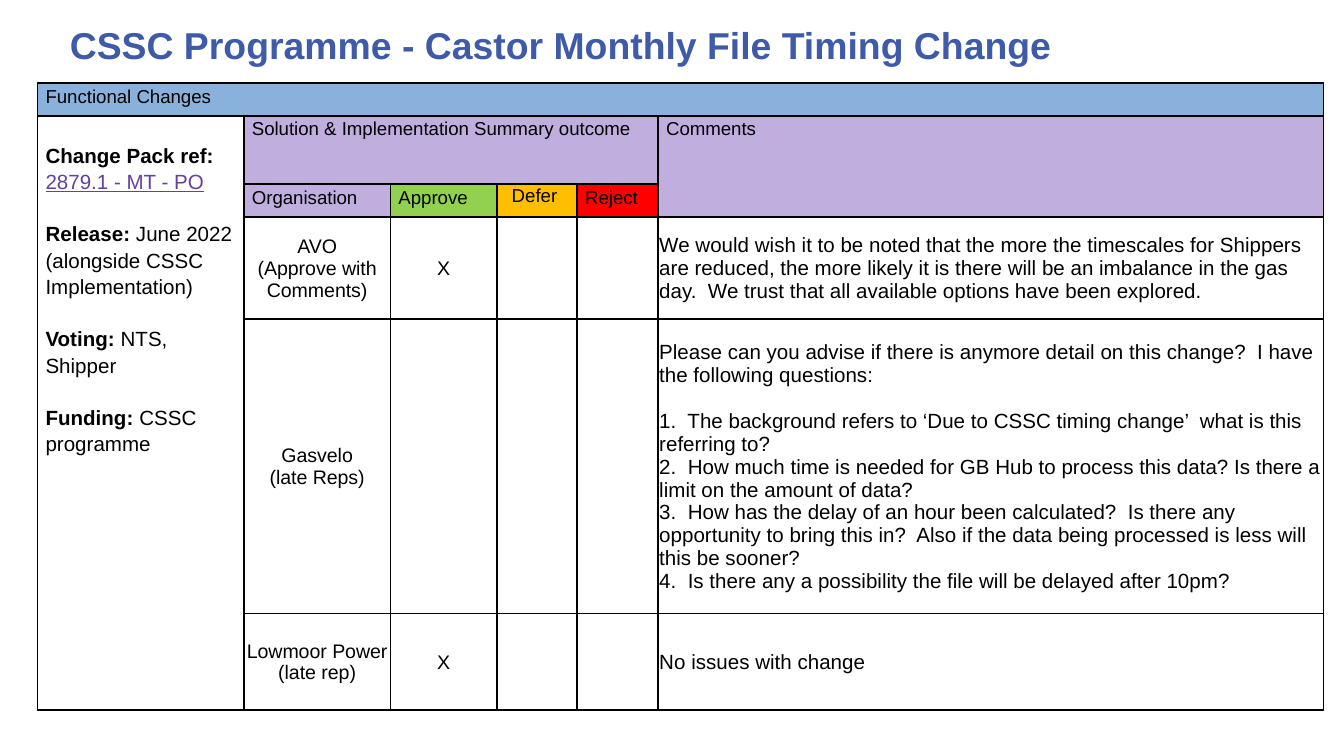
import pptx
import pptx.dml.color
import pptx.enum.text
import pptx.oxml
import pptx.util
from lxml import etree
from pptx.util import Cm, Pt

ALIGN = pptx.enum.text.PP_ALIGN
ANCHOR = pptx.enum.text.MSO_ANCHOR
DRAWING = "http://schemas.openxmlformats.org/drawingml/2006/main"

BLACK, TITLE_BLUE, LINK_PURPLE = "000000", "3E5AA8", "6440A3"
BLUE, LILAC, GREEN, AMBER, RED = "89B1DC", "C0AEDF", "92D050", "FFBF00", "FF0000"

COLUMNS = [3.9, 2.77, 2.01, 1.52, 1.53, 12.57]
ROWS = [0.62, 1.29, 0.62, 1.93, 5.56, 1.82]
WIDE, NARROW = 0.15, 0.02

# Each entry: organisation lines, approval mark, comment paragraphs
RESPONSES = [
    (["AVO", "(Approve with Comments)"], "X", [
        "We would wish it to be noted that the more the timescales for Shippers are "
        "reduced, the more likely it is there will be an imbalance in the gas day.  "
        "We trust that all available options have been explored."]),
    (["Gasvelo", "(late Reps)"], "", [
        "Please can you advise if there is anymore detail on this change?  "
        "I have the following questions:",
        "1.  The background refers to ‘Due to CSSC timing change’  what is this referring to?",
        "2.  How much time is needed for GB Hub to process this data? "
        "Is there a limit on the amount of data?",
        "3.  How has the delay of an hour been calculated?  Is there any opportunity to "
        "bring this in?  Also if the data being processed is less will this be sooner?",
        "4.  Is there any a possibility the file will be delayed after 10pm?"]),
    (["Lowmoor Power ", "(late rep)"], "X", ["No issues with change"]),
]

# Each entry: bold label, plain text
CHANGE_DETAILS = [
    ("Release: ", "June 2022 (alongside CSSC Implementation)"),
    ("Voting: ", "NTS, Shipper"),
    ("Funding: ", "CSSC programme"),
]


def color(hex_string):
    return pptx.dml.color.RGBColor.from_string(hex_string)


def add_run(paragraph, text, size=10, hex_color=BLACK, bold=False, underline=False):
    run = paragraph.add_run()
    run.text = text
    run.font.name = "Arial"
    run.font.size = Pt(size)
    run.font.bold = bold
    run.font.underline = underline
    run.font.color.rgb = color(hex_color)


def write(frame, paragraphs, align=ALIGN.LEFT, spacing=1.0, gaps=None, **font):
    """Fill a frame; a paragraph is text or a list of (text, format) runs,
    and gaps maps a paragraph's index to its space before in points."""
    for index, content in enumerate(paragraphs):
        paragraph = frame.paragraphs[0] if index == 0 else frame.add_paragraph()
        paragraph.alignment = align
        paragraph.line_spacing = spacing
        if gaps and index in gaps:
            paragraph.space_before = Pt(gaps[index])
        runs = [(content, {})] if isinstance(content, str) else content
        for text, changes in runs:
            add_run(paragraph, text, **{**font, **changes})


class SlideBuilder:
    def __init__(self, slide):
        self.slide = slide

    def title(self, text):
        box = self.slide.shapes.add_textbox(Cm(1.07), Cm(0.3), Cm(24.3), Cm(1.12))
        box.text_frame.word_wrap = True
        write(box.text_frame, [text], size=20, hex_color=TITLE_BLUE, bold=True)

    def table(self, left, top, columns, rows):
        frame = self.slide.shapes.add_table(
            len(rows), len(columns), Cm(left), Cm(top), Cm(sum(columns)), Cm(sum(rows)))
        table = frame.table
        table.first_row = table.horz_banding = False
        for column, width in zip(table.columns, columns):
            column.width = Cm(width)
        for row, height in zip(table.rows, rows):
            row.height = Cm(height)
        for cell in table.iter_cells():
            self.border(cell)
            cell.fill.background()
            cell.margin_left = cell.margin_right = Cm(NARROW)
            cell.margin_top = cell.margin_bottom = 0
        return table

    def border(self, cell):
        properties = cell._tc.get_or_add_tcPr()
        for side in ("lnL", "lnR", "lnT", "lnB"):
            properties.append(pptx.oxml.parse_xml(
                f'<a:{side} xmlns:a="{DRAWING}" w="{Pt(1)}"><a:solidFill>'
                f'<a:srgbClr val="{BLACK}"/></a:solidFill></a:{side}>'))

    def header(self, cell, paragraphs, fill=None, top=0, **text_format):
        if fill:
            cell.fill.solid()
            cell.fill.fore_color.rgb = color(fill)
        cell.margin_left = cell.margin_right = Cm(WIDE)
        cell.margin_top = Cm(top)
        write(cell.text_frame, paragraphs, **{"spacing": 1.15, **text_format})

    def body(self, cell, paragraphs, **text_format):
        cell.vertical_anchor = ANCHOR.MIDDLE
        cell.margin_top = Cm(NARROW)
        write(cell.text_frame, paragraphs, **text_format)


def main():
    presentation = pptx.Presentation()
    presentation.slide_width, presentation.slide_height = Cm(25.4), Cm(14.28)
    slide = presentation.slides.add_slide(presentation.slide_layouts[6])
    builder = SlideBuilder(slide)
    builder.title("CSSC Programme - Castor Monthly File Timing Change")

    table = builder.table(0.71, 1.57, COLUMNS, ROWS)
    for first, last in [((0, 0), (0, 5)), ((1, 0), (5, 0)),
                        ((1, 1), (1, 4)), ((1, 5), (2, 5))]:
        table.cell(*first).merge(table.cell(*last))

    builder.header(table.cell(0, 0), ["Functional Changes"], BLUE)
    builder.header(table.cell(1, 1), ["Solution & Implementation Summary outcome"], LILAC)
    builder.header(table.cell(1, 5), ["Comments"], LILAC)
    for column, (label, fill) in enumerate(
            [("Organisation", LILAC), ("Approve", GREEN)], start=1):
        builder.header(table.cell(2, column), [label], fill)
    builder.header(table.cell(2, 3), ["Defer "], AMBER, top=NARROW,
                   align=ALIGN.CENTER, spacing=1.0)
    builder.header(table.cell(2, 4), ["Reject"], RED)

    bold = {"bold": True}
    details = [[("Change Pack ref:", bold)],
               [("2879.1 - MT - PO", {"hex_color": LINK_PURPLE, "underline": True})]]
    details += [[(label, bold), (text, {})] for label, text in CHANGE_DETAILS]
    builder.header(table.cell(1, 0), details, top=0.48, size=11,
                   gaps={2: 14, 3: 14, 4: 14})

    for row, (organisation, mark, comments) in enumerate(RESPONSES, start=3):
        builder.body(table.cell(row, 1), organisation, align=ALIGN.CENTER, size=10.5)
        if mark:
            builder.body(table.cell(row, 2), [mark], align=ALIGN.CENTER, size=10.5)
        builder.body(table.cell(row, 5), comments, size=11, gaps={1: 12.3})

    presentation.save("out.pptx")


if __name__ == "__main__":
    main()
